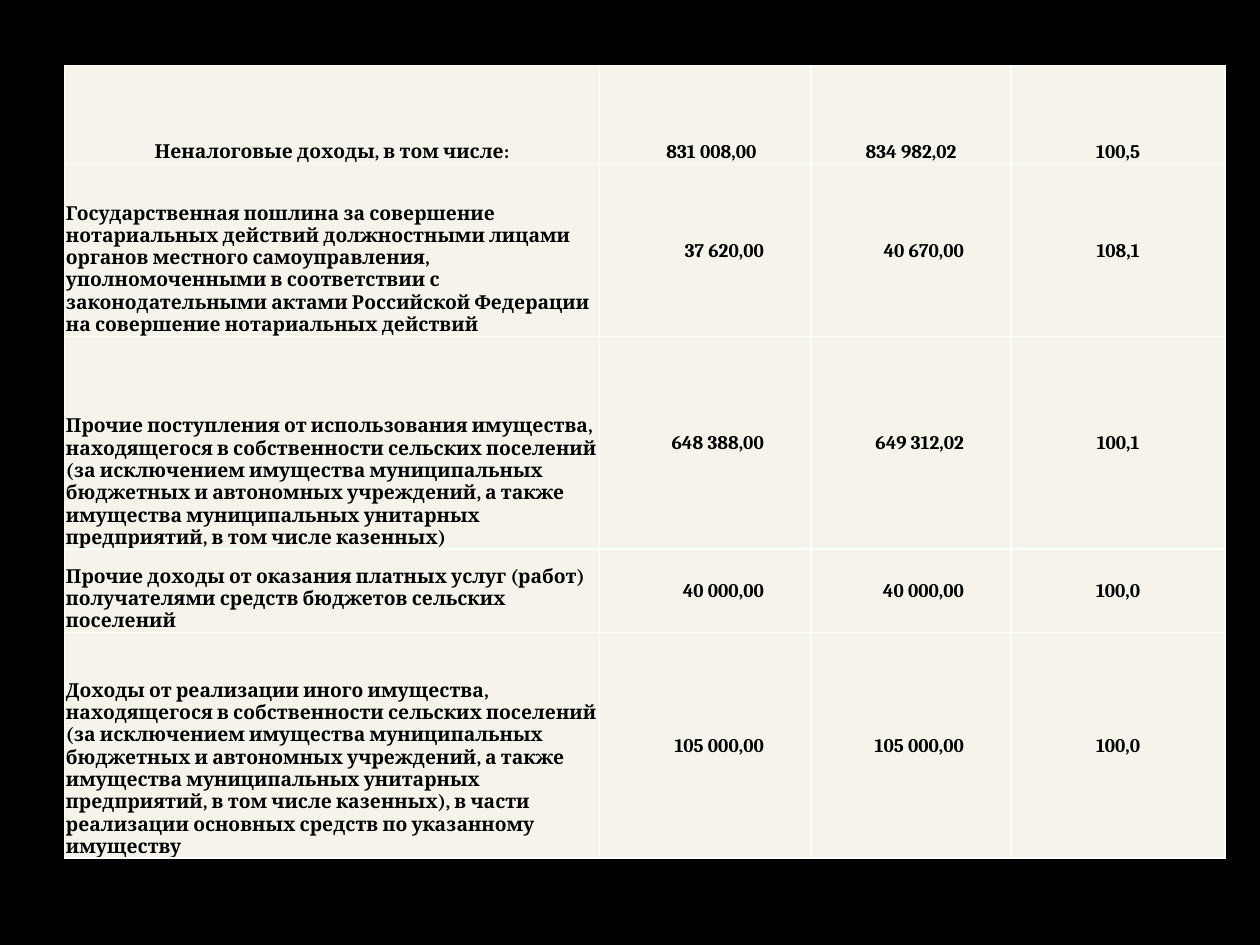
from lxml import etree
from pptx import Presentation
from pptx.dml.color import RGBColor
from pptx.enum.text import MSO_ANCHOR, PP_ALIGN
from pptx.oxml.ns import qn
from pptx.util import Cm, Pt

BLACK = RGBColor(0x00, 0x00, 0x00)
WHITE = RGBColor(0xFF, 0xFF, 0xFF)
CREAM = RGBColor(0xF6, 0xF3, 0xEA)
LEFT, CENTER, RIGHT = PP_ALIGN.LEFT, PP_ALIGN.CENTER, PP_ALIGN.RIGHT
MIDDLE, BOTTOM = MSO_ANCHOR.MIDDLE, MSO_ANCHOR.BOTTOM

FONT = "Cambria"
COLUMN_SHARES = [10.8, 4.27, 4.04, 4.32]
ROW_SHARES = [1.98, 3.48, 4.29, 1.68, 4.55]
INSET = 0.03
TOTAL_INSET = 1.1   # right inset of the amounts in the total row
AMOUNT_INSET = 0.95  # right inset of the other amounts

INCOME_ROWS = [
    ("Неналоговые доходы, в том числе:", "831 008,00", "834 982,02", "100,5"),
    ("Государственная пошлина за совершение нотариальных действий "
     "должностными лицами органов местного самоуправления, уполномоченными "
     "в соответствии с законодательными актами Российской Федерации на "
     "совершение нотариальных действий",
     "37 620,00", "40 670,00", "108,1"),
    ("Прочие поступления от использования имущества, находящегося в "
     "собственности сельских поселений (за исключением имущества "
     "муниципальных бюджетных и автономных учреждений, а также имущества "
     "муниципальных унитарных предприятий, в том числе казенных)",
     "648 388,00", "649 312,02", "100,1"),
    ("Прочие доходы от оказания платных услуг (работ) получателями средств "
     "бюджетов сельских поселений",
     "40 000,00", "40 000,00", "100,0"),
    ("Доходы от реализации иного имущества, находящегося в собственности "
     "сельских поселений (за исключением имущества муниципальных бюджетных "
     "и автономных учреждений, а также имущества муниципальных унитарных "
     "предприятий, в том числе казенных), в части реализации основных "
     "средств по указанному имуществу",
     "105 000,00", "105 000,00", "100,0"),
]


def add_borders(cell, color, width):
    properties = cell._tc.get_or_add_tcPr()
    for side in ("a:lnL", "a:lnR", "a:lnT", "a:lnB"):
        line = etree.SubElement(properties, qn(side), w=str(int(width)))
        fill = etree.SubElement(line, qn("a:solidFill"))
        etree.SubElement(fill, qn("a:srgbClr"), val=str(color))


def format_cell(cell, text, alignment, anchor, right_inset):
    add_borders(cell, WHITE, Pt(1))
    cell.fill.solid()
    cell.fill.fore_color.rgb = CREAM
    cell.vertical_anchor = anchor
    cell.margin_left = cell.margin_top = Cm(INSET)
    cell.margin_right = Cm(right_inset)
    cell.margin_bottom = 0
    cell.text_frame.text = text
    paragraph = cell.text_frame.paragraphs[0]
    paragraph.alignment = alignment
    font = paragraph.runs[0].font
    font.name, font.size, font.bold = FONT, Pt(11), True
    font.color.rgb = BLACK


def add_income_table(slide, left, top, width, height):
    shape = slide.shapes.add_table(
        len(INCOME_ROWS), len(COLUMN_SHARES),
        Cm(left), Cm(top), Cm(width), Cm(height))
    table = shape.table
    table.first_row = table.horz_banding = False
    for column, share in zip(table.columns, COLUMN_SHARES):
        column.width = Cm(width * share / sum(COLUMN_SHARES))
    for row, share in zip(table.rows, ROW_SHARES):
        row.height = Cm(height * share / sum(ROW_SHARES))

    for row_index, texts in enumerate(INCOME_ROWS):
        is_total = row_index == 0
        amount_inset = TOTAL_INSET if is_total else AMOUNT_INSET
        alignments = [CENTER if is_total else LEFT, RIGHT, RIGHT, CENTER]
        for column_index, text in enumerate(texts):
            alignment = alignments[column_index]
            at_bottom = is_total or column_index == 0
            format_cell(table.cell(row_index, column_index), text, alignment,
                        BOTTOM if at_bottom else MIDDLE,
                        amount_inset if alignment == RIGHT else INSET)


def main():
    presentation = Presentation()
    presentation.slide_width, presentation.slide_height = Cm(25.4), Cm(19.05)
    slide = presentation.slides.add_slide(presentation.slide_layouts[6])

    # Black background
    background = slide.background.fill
    background.solid()
    background.fore_color.rgb = BLACK

    # Non-tax income table
    add_income_table(slide, 1.3, 1.32, 23.4, 15.98)
    presentation.save("out.pptx")


if __name__ == "__main__":
    main()
